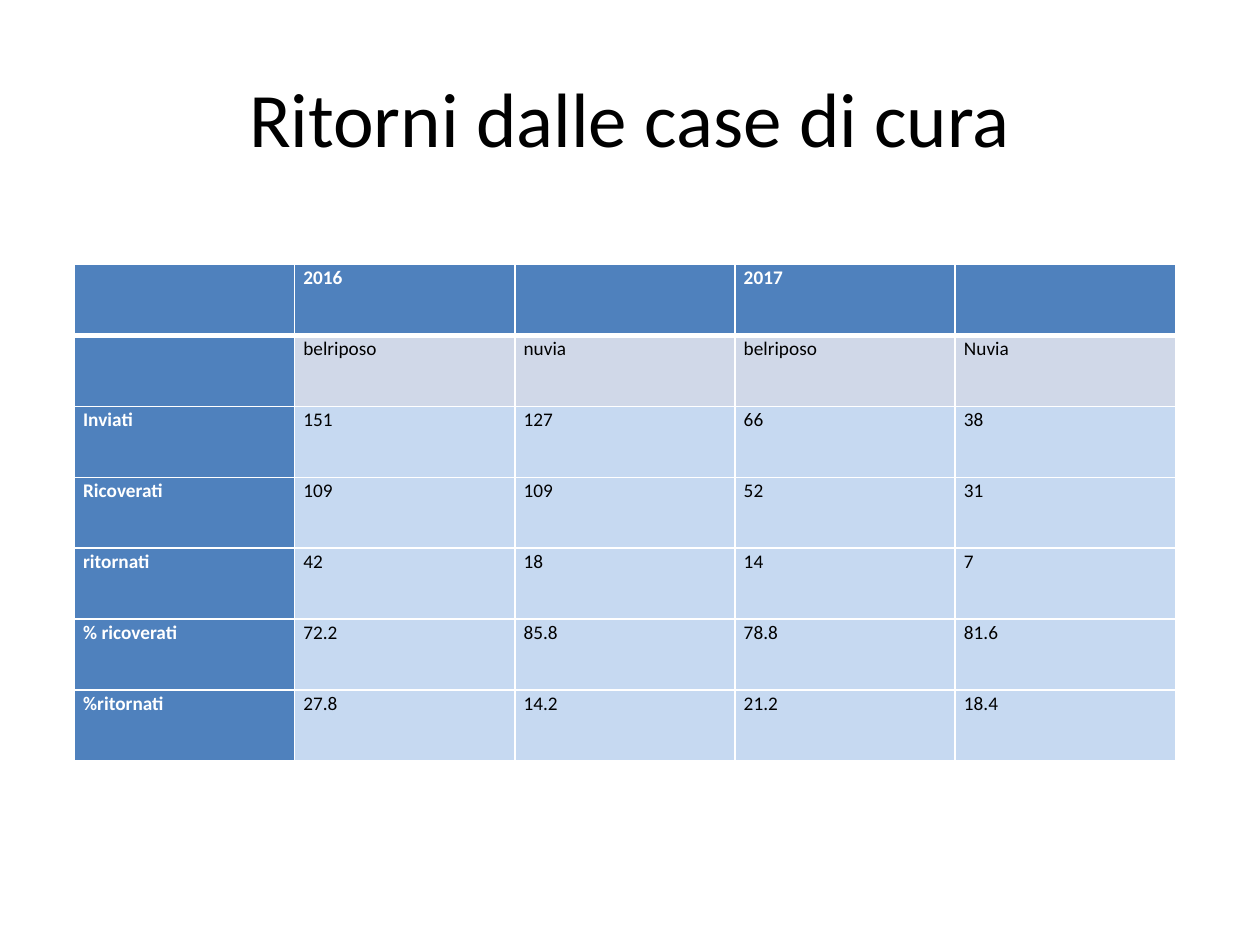
from lxml import etree
from pptx import Presentation
from pptx.dml.color import RGBColor
from pptx.enum.text import MSO_ANCHOR, PP_ALIGN
from pptx.oxml.ns import qn
from pptx.util import Inches, Pt

CENTER = PP_ALIGN.CENTER
MIDDLE = MSO_ANCHOR.MIDDLE

WHITE = RGBColor(0xFF, 0xFF, 0xFF)
BLACK = RGBColor(0x00, 0x00, 0x00)
HEADER_BLUE = RGBColor(0x4F, 0x81, 0xBD)
CLINIC_GREY = RGBColor(0xD0, 0xD8, 0xE8)
VALUE_BLUE = RGBColor(0xC6, 0xD9, 0xF1)
FONT = "Calibri"

# Content
TITLE = "Ritorni dalle case di cura"
ROWS = [
    ("", "2016", "", "2017", ""),
    ("", "belriposo", "nuvia", "belriposo", "Nuvia"),
    ("Inviati", "151", "127", "66", "38"),
    ("Ricoverati", "109", "109", "52", "31"),
    ("ritornati", "42", "18", "14", "7"),
    ("% ricoverati", "72.2", "85.8", "78.8", "81.6"),
    ("%ritornati", "27.8", "14.2", "21.2", "18.4"),
]

# Layout
TITLE_BOX = {"left": 0.5, "top": 0.3, "width": 9, "height": 1.25}
TABLE_BOX = [Inches(v) for v in (0.59, 2.1, 8.74, 3.94)]
CELL_MARGINS = {"margin_left": 0.07, "margin_right": 0.07,
                "margin_top": 0, "margin_bottom": 0}


def style_font(font, **values):
    font.name = FONT
    font.color.rgb = values.pop("color")
    for name, value in values.items():
        setattr(font, name, value)


def add_borders(cell, widths):
    properties = cell._tc.get_or_add_tcPr()
    for side, width in widths.items():
        line = etree.SubElement(properties, qn(f"a:ln{side}"), w=str(Pt(width)))
        solid = etree.SubElement(line, qn("a:solidFill"))
        etree.SubElement(solid, qn("a:srgbClr"), val=str(WHITE))


def format_cell(cell, text, row, column):
    is_header = row == 0 or column == 0
    for name, value in CELL_MARGINS.items():
        setattr(cell, name, Inches(value))
    # The rule under the year row is thicker than the others
    add_borders(cell, {"L": 1, "R": 1, "T": 3 if row == 1 else 1,
                       "B": 3 if row == 0 else 1})
    cell.fill.solid()
    cell.fill.fore_color.rgb = (HEADER_BLUE if is_header
                                else CLINIC_GREY if row == 1 else VALUE_BLUE)
    if text:
        cell.text = text
        paragraph = cell.text_frame.paragraphs[0]
        paragraph.line_spacing = 1.07
        style_font(paragraph.runs[0].font, size=Pt(11), bold=is_header,
                   color=WHITE if is_header else BLACK)


def main():
    deck = Presentation()
    deck.slide_width, deck.slide_height = Inches(10), Inches(7.5)
    slide = deck.slides.add_slide(deck.slide_layouts[5])

    # Title
    title = slide.shapes.title
    for name, value in TITLE_BOX.items():
        setattr(title, name, Inches(value))
    title.text_frame.text = TITLE
    title.text_frame.vertical_anchor = MIDDLE
    heading = title.text_frame.paragraphs[0]
    heading.alignment = CENTER
    style_font(heading.runs[0].font, size=Pt(44), color=BLACK)

    # Table of returns by year and clinic
    returns = slide.shapes.add_table(len(ROWS), len(ROWS[0]), *TABLE_BOX).table
    for row, texts in enumerate(ROWS):
        for column, text in enumerate(texts):
            format_cell(returns.cell(row, column), text, row, column)

    deck.save("out.pptx")


if __name__ == "__main__":
    main()
